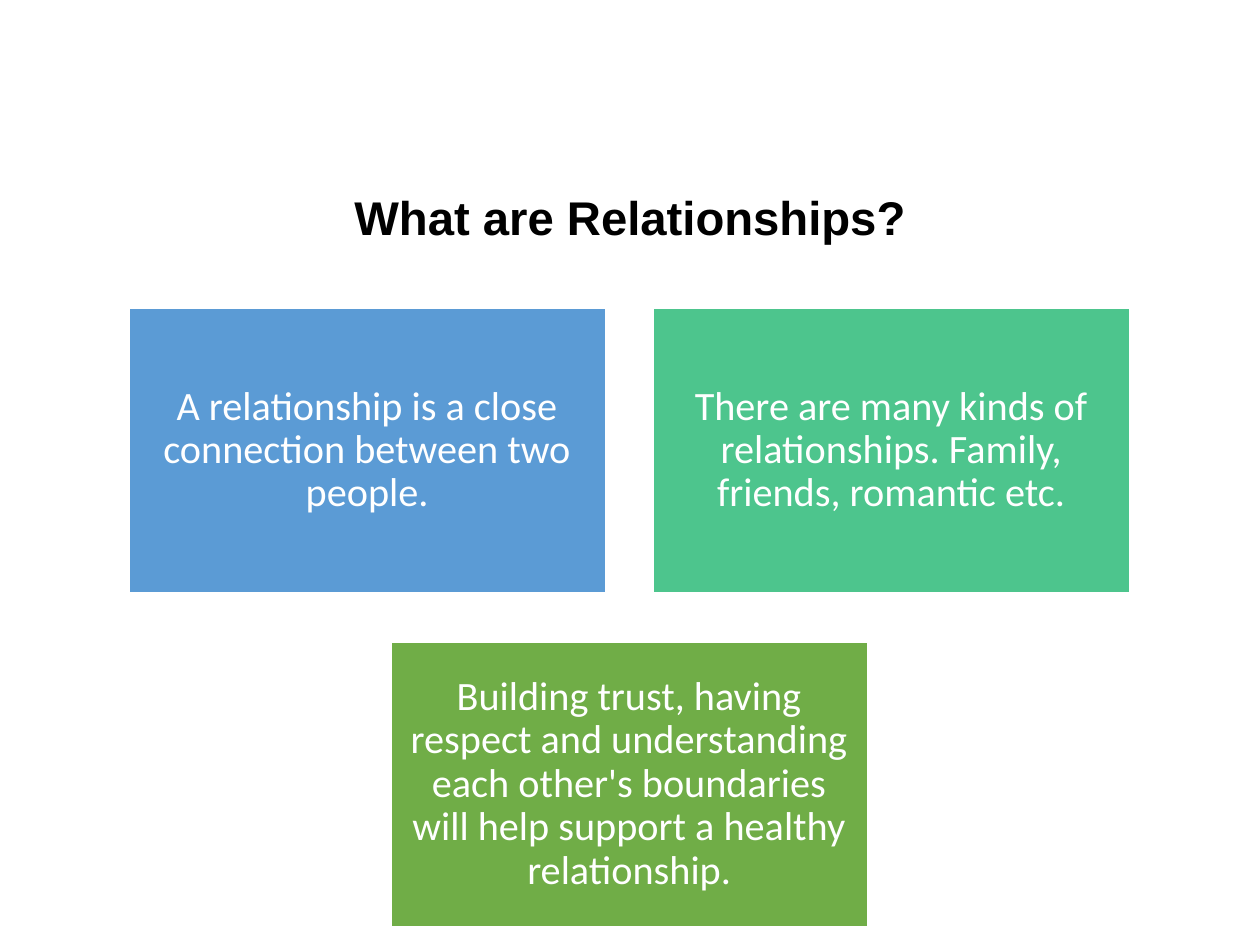
from dataclasses import dataclass
from typing import Any

from pptx import Presentation
from pptx import util as u
from pptx.dml.color import RGBColor
from pptx.enum import shapes, text


def color(value):
    return RGBColor.from_string(value)


@dataclass
class Board:
    page: Any
    left: float = 1.02
    top: float = 2.44
    half_column: float = 2.08
    row_step: float = 2.65
    card_width: float = 3.79
    card_height: float = 2.27
    margin: float = 0.1

    def label(self, box, words, font, size, ink, bold=False):
        frame = box.text_frame
        frame.word_wrap = True
        frame.vertical_anchor = text.MSO_ANCHOR.MIDDLE
        frame.margin_left = frame.margin_right = u.Inches(self.margin)
        frame.margin_top = frame.margin_bottom = u.Inches(self.margin)
        para = frame.paragraphs[0]
        para.alignment = text.PP_ALIGN.CENTER
        para.line_spacing = 0.9
        span = para.add_run()
        span.text = words
        span.font.name = font
        span.font.size = u.Pt(size)
        span.font.bold = bold
        span.font.color.rgb = color(ink)

    def title(self, words):
        box = self.page.shapes.add_textbox(
            u.Inches(0.69), u.Inches(1.02), u.Inches(8.62), u.Inches(1.45))
        self.label(box, words, "Arial", 27, "000000", bold=True)

    def card(self, column, row, fill, words):
        box = self.page.shapes.add_shape(
            shapes.MSO_SHAPE.RECTANGLE,
            u.Inches(self.left + column * self.half_column),
            u.Inches(self.top + row * self.row_step),
            u.Inches(self.card_width), u.Inches(self.card_height))
        box.shadow.inherit = False
        box.fill.solid()
        box.fill.fore_color.rgb = color(fill)
        box.line.color.rgb = color("FFFFFF")
        box.line.width = u.Pt(1.5)
        self.label(box, words, "Calibri", 23, "FFFFFF")


def main():
    deck = Presentation()
    deck.slide_width, deck.slide_height = u.Inches(10), u.Inches(7.5)
    board = Board(deck.slides.add_slide(deck.slide_layouts[6]))
    board.title("What are Relationships?")
    cards = [
        (0, 0, "5B9BD5", "A relationship is a close connection between two people."),
        (2, 0, "4DC58D", "There are many kinds of relationships. Family, friends, romantic etc."),
        (1, 1, "70AD47", "Building trust, having respect and understanding each other's "
                         "boundaries will help support a healthy relationship."),
    ]
    for column, row, fill, words in cards:
        board.card(column, row, fill, words)
    deck.save("out.pptx")


if __name__ == "__main__":
    main()
